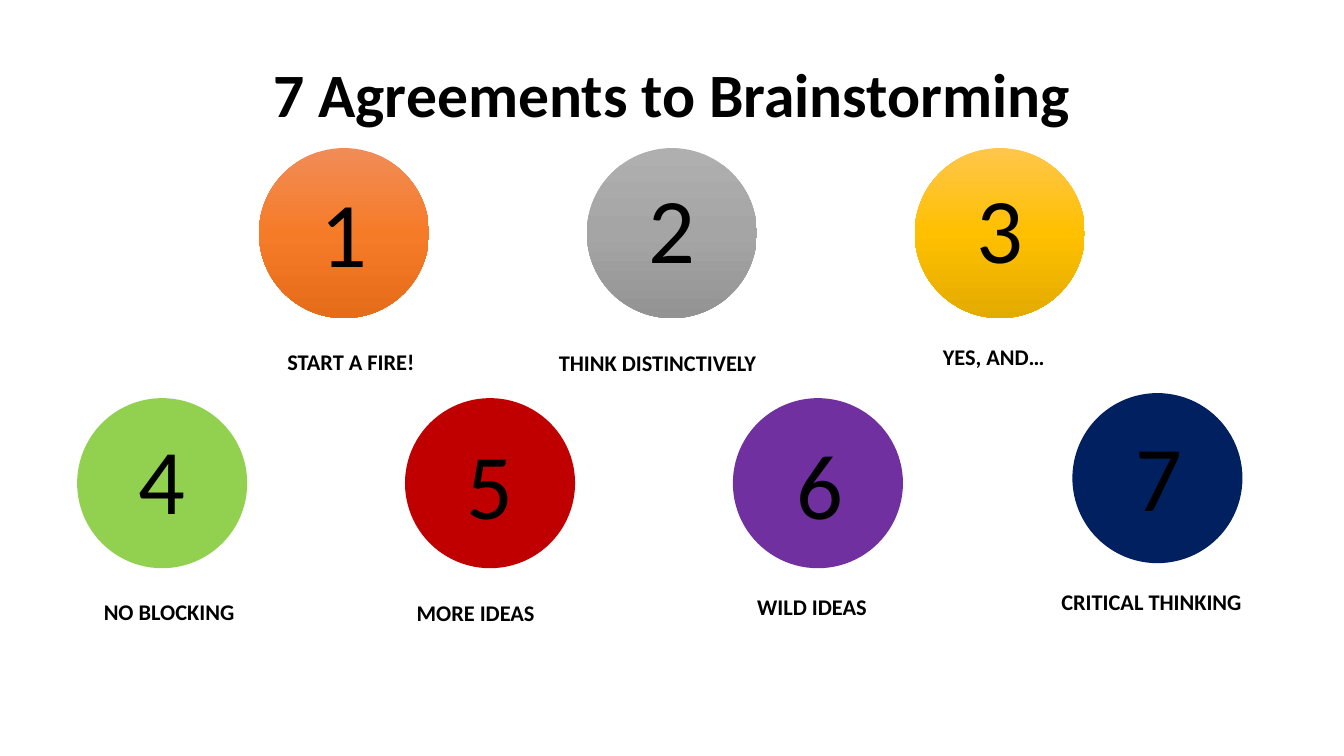
from copy import deepcopy

from pptx import Presentation
from pptx.dml.color import RGBColor
from pptx.enum.shapes import MSO_SHAPE
from pptx.enum.text import MSO_ANCHOR, PP_ALIGN
from pptx.oxml.ns import qn
from pptx.util import Pt

BLACK = RGBColor(0x00, 0x00, 0x00)
ORANGES = [RGBColor(0xF1, 0x8C, 0x57), RGBColor(0xF6, 0x7B, 0x28), RGBColor(0xE5, 0x6C, 0x19)]
GRAYS = [RGBColor(0xAF, 0xAF, 0xAF), RGBColor(0xA5, 0xA5, 0xA5), RGBColor(0x93, 0x93, 0x93)]
GOLDS = [RGBColor(0xFF, 0xC6, 0x4B), RGBColor(0xFF, 0xC0, 0x00), RGBColor(0xE3, 0xAB, 0x00)]
GREEN = RGBColor(0x92, 0xD0, 0x50)
RED = RGBColor(0xC0, 0x00, 0x00)
PURPLE = RGBColor(0x70, 0x30, 0xA0)
NAVY = RGBColor(0x00, 0x20, 0x60)

FONT = "Calibri"
DIAMETER = 121.5
PITCH = 234.2
TOP_ROW = (185, 105.8)
BOTTOM_ROW = (55.1, 284.4)
LAST_CIRCLE = (766, 280.8)
CAPTION_W, CAPTION_H = 199.4, 56.9
DIGIT_W, DIGIT_H = 51.8, 87.1

# Caption offset from its circle, by column
CAPTION_OFFSETS = [(-34, 117.4), (-49.2, 118), (-43.2, 113.8), (-43.2, 113.8)]

# Colours, caption, and shift of the digit: right of centre, below the circle's top
TOP_AGREEMENTS = [
    (ORANGES, "START A FIRE!", 0, 15.8),
    (GRAYS, "THINK DISTINCTIVELY", 0, 13.2),
    (GOLDS, "YES, AND…", 0, 13),
]
BOTTOM_AGREEMENTS = [
    ([GREEN], "NO BLOCKING", 0, 13.7),
    ([RED], "MORE IDEAS", 0, 17.3),
    ([PURPLE], "WILD IDEAS", 1.7, 17.3),
    ([NAVY], "CRITICAL THINKING", 1, 15),
]


def set_text(sp, text, size, bold=False, wrap=True):
    """Write one centred line into a shape and return its text frame."""
    tf = sp.text_frame
    tf.word_wrap = wrap
    tf.text = text
    p = tf.paragraphs[0]
    p.alignment = PP_ALIGN.CENTER
    font = p.runs[0].font
    font.name, font.size, font.bold = FONT, Pt(size), bold
    font.color.rgb = BLACK
    return tf


def add_text(slide, x, y, w, h, text, size, **options):
    sp = slide.shapes.add_textbox(Pt(x), Pt(y), Pt(w), Pt(h))
    return set_text(sp, text, size, **options)


def fill_shape(sp, colors):
    """Fill with one solid colour, or three as a top-to-bottom gradient."""
    if len(colors) == 1:
        sp.fill.solid()
        sp.fill.fore_color.rgb = colors[0]
        return
    sp.fill.gradient()
    sp.fill.gradient_angle = 270
    stops = sp._element.spPr.find(qn("a:gradFill")).find(qn("a:gsLst"))
    stops.append(deepcopy(stops[0]))
    for i, (stop, color) in enumerate(zip(sp.fill.gradient_stops, colors)):
        stop.position = i / 2
        stop.color.rgb = color


def add_circle(slide, x, y, colors):
    sp = slide.shapes.add_shape(MSO_SHAPE.OVAL, Pt(x), Pt(y), Pt(DIAMETER), Pt(DIAMETER))
    sp.shadow.inherit = False
    sp.line.fill.background()
    fill_shape(sp, colors)


def add_caption(slide, x, y, text):
    """Add an unfilled outline that holds a caption below its circle."""
    right, bottom = Pt(x + CAPTION_W), Pt(y + CAPTION_H)
    outline = slide.shapes.build_freeform(Pt(x), Pt(y))
    outline.add_line_segments([(right, Pt(y)), (right, bottom), (Pt(x), bottom)])
    sp = outline.convert_to_shape()
    sp.shadow.inherit = False
    sp.fill.background()
    sp.line.fill.background()
    tf = set_text(sp, text, 16, bold=True)
    tf.vertical_anchor = MSO_ANCHOR.TOP
    tf.margin_left = tf.margin_right = tf.margin_bottom = 0
    tf.margin_top = Pt(25.4)


def add_agreement(slide, number, column, x, y, colors, caption, digit_shift, digit_drop):
    add_circle(slide, x, y, colors)
    dx, dy = CAPTION_OFFSETS[column]
    add_caption(slide, x + dx, y + dy, caption)
    add_text(slide, x + (DIAMETER - DIGIT_W) / 2 + digit_shift, y + digit_drop,
             DIGIT_W, DIGIT_H, str(number), 66, wrap=False)


def main():
    prs = Presentation()
    prs.slide_width, prs.slide_height = Pt(960), Pt(540)
    slide = prs.slides.add_slide(prs.slide_layouts[6])

    # Title
    tf = add_text(slide, 84.2, 31.7, 792, 75.6, "7 Agreements to Brainstorming", 44, bold=True)
    tf.vertical_anchor = MSO_ANCHOR.MIDDLE
    tf.paragraphs[0].line_spacing = 0.9

    # Two rows of numbered circles; the last one stands a little apart
    number = 0
    for (left, top), agreements in ((TOP_ROW, TOP_AGREEMENTS), (BOTTOM_ROW, BOTTOM_AGREEMENTS)):
        for column, agreement in enumerate(agreements):
            number += 1
            x, y = LAST_CIRCLE if column == 3 else (left + column * PITCH, top)
            add_agreement(slide, number, column, x, y, *agreement)

    prs.save("out.pptx")


if __name__ == "__main__":
    main()
